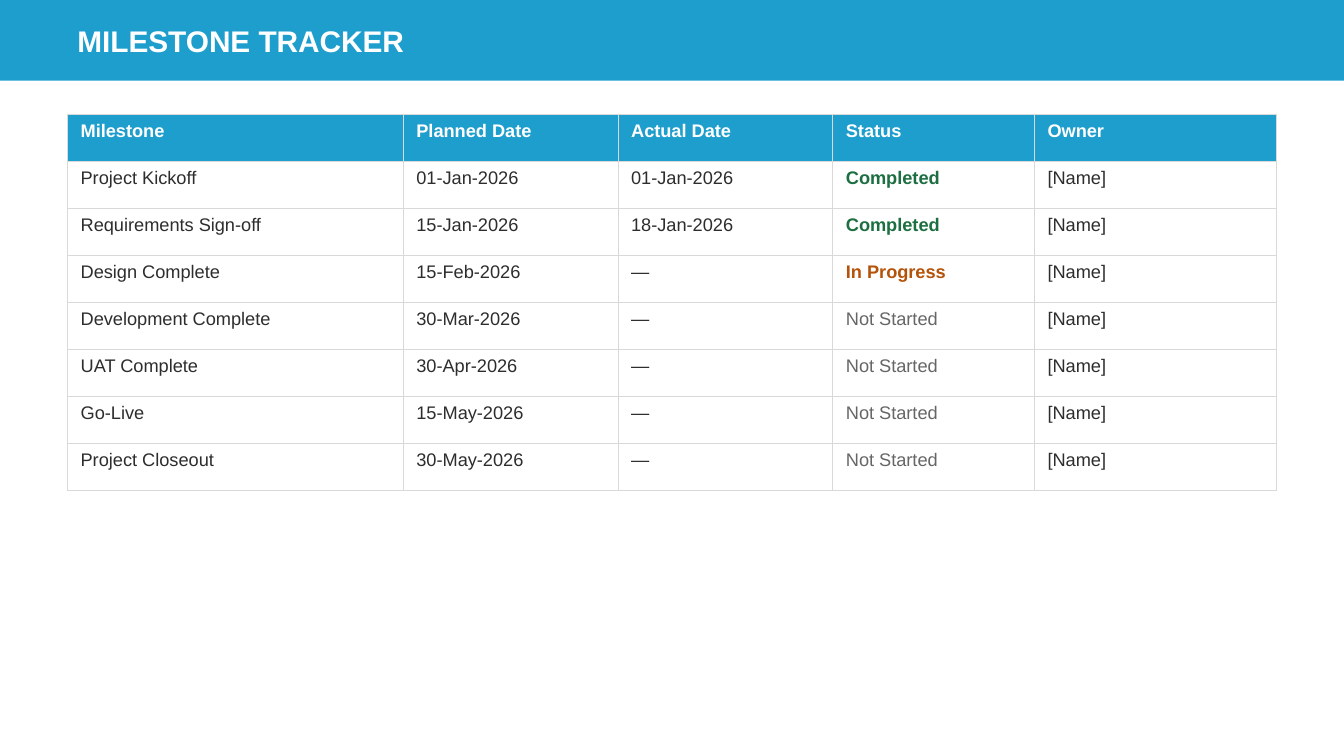
import pptx
import pptx.util
import pptx.dml.color
import pptx.enum.shapes
import pptx.enum.text
import pptx.oxml
import pptx.oxml.ns
from pptx.util import Inches

BLUE = pptx.dml.color.RGBColor(0x1E, 0x9E, 0xCD)
WHITE = pptx.dml.color.RGBColor(0xFF, 0xFF, 0xFF)
INK = pptx.dml.color.RGBColor(0x2D, 0x2D, 0x2D)
GREEN = pptx.dml.color.RGBColor(0x1D, 0x6F, 0x42)
ORANGE = pptx.dml.color.RGBColor(0xB4, 0x53, 0x09)
GREY = pptx.dml.color.RGBColor(0x66, 0x66, 0x66)
BORDER = pptx.dml.color.RGBColor(0xD9, 0xD9, 0xD9)

HEADINGS = ["Milestone", "Planned Date", "Actual Date", "Status", "Owner"]
MILESTONES = [
    ("Project Kickoff", "01-Jan-2026", "01-Jan-2026", "Completed"),
    ("Requirements Sign-off", "15-Jan-2026", "18-Jan-2026", "Completed"),
    ("Design Complete", "15-Feb-2026", "—", "In Progress"),
    ("Development Complete", "30-Mar-2026", "—", "Not Started"),
    ("UAT Complete", "30-Apr-2026", "—", "Not Started"),
    ("Go-Live", "15-May-2026", "—", "Not Started"),
    ("Project Closeout", "30-May-2026", "—", "Not Started"),
]
OWNER = "[Name]"
STATUS_COLORS = {"Completed": GREEN, "In Progress": ORANGE, "Not Started": GREY}
BOLD_STATUSES = ("Completed", "In Progress")
COLUMN_WIDTHS = [3.33, 2.13, 2.13, 2, 2.4]
ROW_HEIGHT = 0.467
LEFT = 0.67


def style_font(font, size, color, bold):
    font.name = "Arial"
    font.size = pptx.util.Pt(size)
    font.color.rgb = color
    font.bold = bold


def add_borders(cell):
    properties = cell._tc.get_or_add_tcPr()
    for side in ("lnL", "lnR", "lnT", "lnB"):
        properties.append(pptx.oxml.parse_xml(
            f'<a:{side} {pptx.oxml.ns.nsdecls("a")} w="{pptx.util.Pt(0.5)}">'
            f'<a:solidFill><a:srgbClr val="{BORDER}"/></a:solidFill></a:{side}>'))


presentation = pptx.Presentation()
presentation.slide_width = Inches(13.33)
presentation.slide_height = Inches(7.5)
slide = presentation.slides.add_slide(presentation.slide_layouts[6])

# Title band
band = slide.shapes.add_shape(pptx.enum.shapes.MSO_SHAPE.RECTANGLE,
                              0, 0, presentation.slide_width, Inches(0.8))
band.shadow.inherit = False
band.fill.solid()
band.fill.fore_color.rgb = BLUE
band.line.fill.background()

title = slide.shapes.add_textbox(Inches(LEFT), Inches(0.07), Inches(12), Inches(0.67)).text_frame
title.word_wrap = True
title.vertical_anchor = pptx.enum.text.MSO_ANCHOR.MIDDLE
title.text = "MILESTONE TRACKER"
style_font(title.paragraphs[0].font, 21.3, WHITE, True)

# Milestone table
rows = [HEADINGS] + [(*milestone, OWNER) for milestone in MILESTONES]
tracker = slide.shapes.add_table(len(rows), len(HEADINGS), Inches(LEFT), Inches(1.13),
                                 Inches(12), Inches(ROW_HEIGHT * len(rows))).table
tracker.horz_banding = False
for column, width in zip(tracker.columns, COLUMN_WIDTHS):
    column.width = Inches(width)

for row_index, row in enumerate(rows):
    tracker.rows[row_index].height = Inches(ROW_HEIGHT)
    is_header = row_index == 0
    for column_index, text in enumerate(row):
        cell = tracker.cell(row_index, column_index)
        cell.margin_left = cell.margin_right = Inches(0.13)
        cell.margin_top = cell.margin_bottom = Inches(0.07)
        add_borders(cell)
        if is_header:
            cell.fill.solid()
            cell.fill.fore_color.rgb = BLUE
        else:
            cell.fill.background()
        cell.text = text
        color = WHITE if is_header else STATUS_COLORS.get(text, INK)
        style_font(cell.text_frame.paragraphs[0].font, 13, color,
                   is_header or text in BOLD_STATUSES)

presentation.save("out.pptx")
